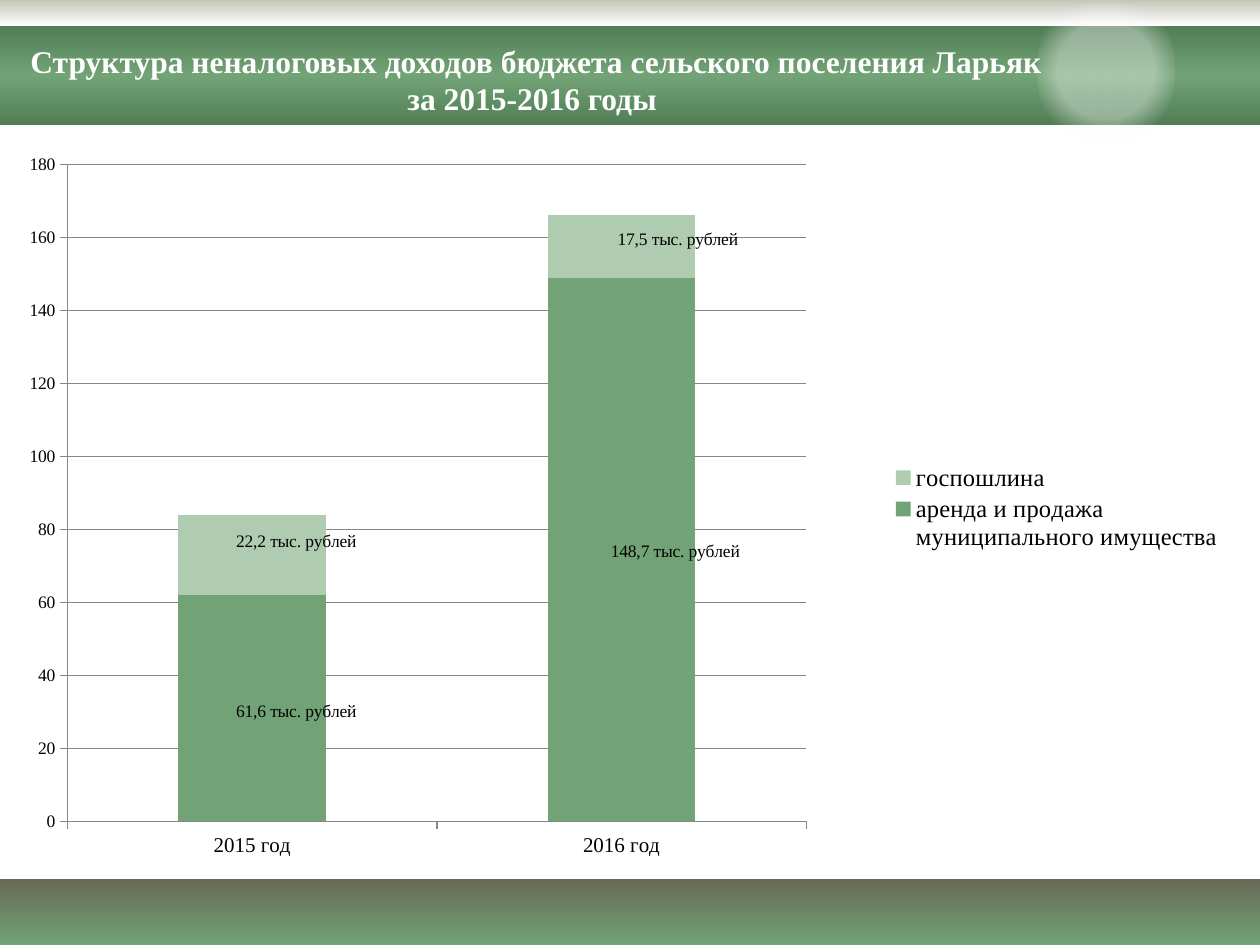
"""Build a slide with a stacked column chart of non-tax budget revenue."""
from lxml import etree
from pptx import Presentation
from pptx.chart.data import CategoryChartData
from pptx.dml.color import RGBColor
from pptx.enum.chart import XL_CHART_TYPE, XL_LEGEND_POSITION, XL_TICK_MARK
from pptx.enum.shapes import MSO_SHAPE
from pptx.enum.text import MSO_ANCHOR, PP_ALIGN
from pptx.oxml import parse_xml
from pptx.oxml.ns import nsdecls, qn
from pptx.util import Inches, Pt

RECT, OVAL = MSO_SHAPE.RECTANGLE, MSO_SHAPE.OVAL
STACKED = XL_CHART_TYPE.COLUMN_STACKED
RIGHT = XL_LEGEND_POSITION.RIGHT
OUTSIDE, NO_TICK = XL_TICK_MARK.OUTSIDE, XL_TICK_MARK.NONE
TOP, CENTER = MSO_ANCHOR.TOP, PP_ALIGN.CENTER
FONT = "Times New Roman"
COLORS = {
    "white": "FFFFFF", "black": "000000", "olive": "676A55", "stone": "C4C6B8",
    "dark": "527E56", "green": "72A376", "light": "B0CCB0", "grid": "878787",
}


def set_gradient(sp, stops, direction):
    """Replace the fill of a shape by stops of (percent, colour, opacity)."""
    sp.fill.background()
    gs = "".join(
        f'<a:gs pos="{pos * 1000}"><a:srgbClr val="{COLORS[name]}">'
        f'<a:alpha val="{alpha * 1000}"/></a:srgbClr></a:gs>'
        for pos, name, alpha in stops)
    grad = parse_xml(f'<a:gradFill {nsdecls("a")} rotWithShape="1">'
                     f'<a:gsLst>{gs}</a:gsLst>{direction}</a:gradFill>')
    props = sp.element.spPr
    props.replace(props.find(qn("a:noFill")), grad)


def set_layout(parent, index, modes, **percents):
    """Give a chart element a manual layout in percent of the chart."""
    for old in parent.findall(qn("c:layout")):
        parent.remove(old)
    layout = etree.Element(qn("c:layout"))
    manual = etree.SubElement(layout, qn("c:manualLayout"))
    for tag, value in modes.items():
        etree.SubElement(manual, qn(f"c:{tag}")).set("val", value)
    for tag, value in percents.items():
        etree.SubElement(manual, qn(f"c:{tag}")).set("val", f"{value / 100:.4f}")
    parent.insert(index, layout)


prs = Presentation()
prs.slide_width, prs.slide_height = Inches(10), Inches(7.5)
s = prs.slides.add_slide(prs.slide_layouts[5])
s.background.fill.solid()
s.background.fill.fore_color.rgb = RGBColor.from_string(COLORS["white"])

LINEAR = '<a:lin ang="5400000" scaled="0"/>'
RADIAL = ('<a:path path="circle"><a:fillToRect l="50000" t="50000" '
          'r="50000" b="50000"/></a:path>')
decorations = [
    (RECT, (0, 6.98, 10, 0.52), [(0, "olive", 100), (100, "green", 100)], LINEAR),
    (RECT, (0, 0, 10, 0.21), [(0, "stone", 100), (100, "white", 100)], LINEAR),
    (RECT, (0, 0.21, 10, 0.78),
     [(0, "dark", 100), (50, "green", 100), (100, "dark", 100)], LINEAR),
    (OVAL, (8.23, -0.11, 1.1, 1.34), [(44, "white", 38), (67, "white", 0)], RADIAL),
]
for kind, box, stops, direction in decorations:
    sp = s.shapes.add_shape(kind, *map(Inches, box))
    sp.shadow.inherit = False
    sp.line.fill.background()
    set_gradient(sp, stops, direction)

title = s.shapes.title
title.left, title.top, title.width, title.height = map(Inches, (0.12, 0.28, 8.27, 1.01))
title.element.getparent().append(title.element)
tf = title.text_frame
tf.word_wrap = True
tf.vertical_anchor = TOP
tf.text = "Структура неналоговых доходов бюджета сельского поселения Ларьяк за 2015-2016 годы "
p = tf.paragraphs[0]
p.alignment = CENTER
p.font.name, p.font.size, p.font.bold = FONT, Pt(18), True
p.font.color.rgb = RGBColor.from_string(COLORS["white"])

series = [
    ("аренда и продажа муниципального имущества", (62, 149), "green",
     [("61,6 тыс. рублей", 3.6, 0.5), ("148,7 тыс. рублей", 4.4, 0.3)]),
    ("госпошлина", (22, 17), "light",
     [("22,2 тыс. рублей", 3.6, -1.8), ("17,5 тыс. рублей", 4.6, -0.9)]),
]
data = CategoryChartData()
data.categories = ["2015 год", "2016 год"]
for name, values, color, labels in series:
    data.add_series(name, values)
chart = s.shapes.add_chart(STACKED, *map(Inches, (0.12, 1.15, 9.69, 5.75)), data).chart
chart.has_title = False
chart.font.name, chart.font.size = FONT, Pt(10)
chart.font.color.rgb = RGBColor.from_string(COLORS["black"])

plot = chart.plots[0]
plot.gap_width, plot.overlap, plot.vary_by_categories = 150, 100, False
for ser, (name, values, color, labels) in zip(plot.series, series):
    ser.format.fill.solid()
    ser.format.fill.fore_color.rgb = RGBColor.from_string(COLORS[color])
    for i, (text, dx, dy) in enumerate(labels):
        label = ser.points[i].data_label
        r = label.text_frame.paragraphs[0].add_run()
        r.text = text
        r.font.name, r.font.size = FONT, Pt(10)
        r.font.color.rgb = RGBColor.from_string(COLORS["black"])
    for dlbl, (text, dx, dy) in zip(ser.data_labels._element.findall(qn("c:dLbl")), labels):
        set_layout(dlbl, 1, {}, x=dx, y=dy)

cat, val = chart.category_axis, chart.value_axis
val.minimum_scale, val.maximum_scale, val.major_unit = 0, 180, 20
val.has_major_gridlines = True
cat.tick_labels.font.size = Pt(12)
for axis in (cat, val):
    axis.major_tick_mark, axis.minor_tick_mark = OUTSIDE, NO_TICK
for line in (cat.format.line, val.format.line, val.major_gridlines.format.line):
    line.color.rgb = RGBColor.from_string(COLORS["grid"])
    line.width = Pt(0.75)

chart.has_legend = True
legend = chart.legend
legend.position, legend.include_in_layout = RIGHT, False
legend.font.size = Pt(14)
root = chart.element
edge = {"xMode": "edge", "yMode": "edge"}
set_layout(root.find(f".//{qn('c:legend')}"), 1, edge, x=71.3, y=43.5, w=28, h=13)
set_layout(root.find(f".//{qn('c:plotArea')}"), 0, {"layoutTarget": "inner", **edge},
           x=4.3, y=2.7, w=60.5, h=90.7)

prs.save("out.pptx")
